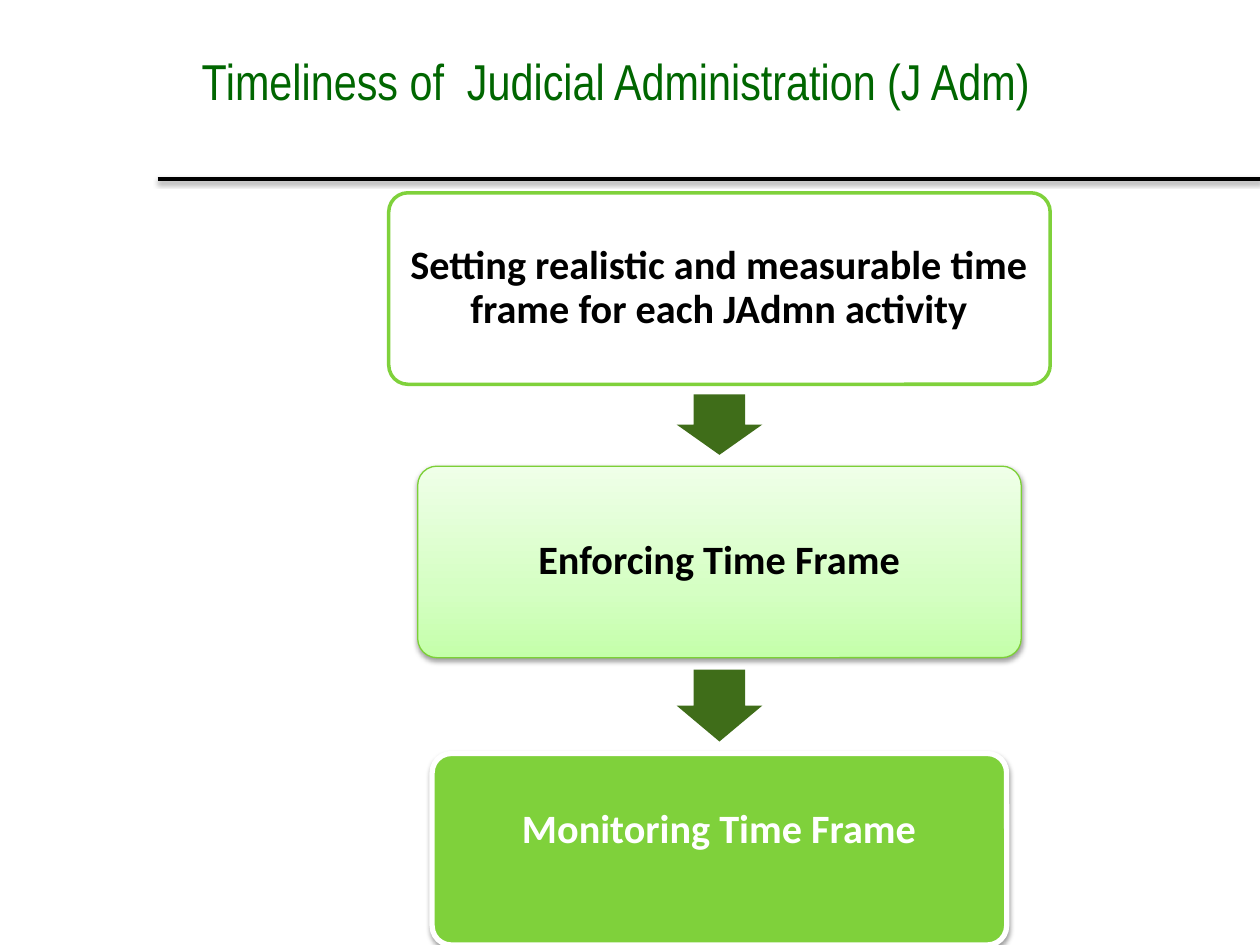
import copy
import dataclasses
import typing

import lxml.etree
import pptx
import pptx.dml.color
import pptx.enum.shapes
import pptx.enum.text
import pptx.oxml.ns
import pptx.util

RGBColor = pptx.dml.color.RGBColor
Shapes = pptx.enum.shapes.MSO_SHAPE
Inches = pptx.util.Inches

BLACK = RGBColor(0x00, 0x00, 0x00)
WHITE = RGBColor(0xFF, 0xFF, 0xFF)
TITLE_GREEN = RGBColor(0x00, 0x66, 0x00)
GREEN = RGBColor(0x7F, 0xD1, 0x3B)
EDGE_GREEN = RGBColor(0x7C, 0xD0, 0x36)
DARK_GREEN = RGBColor(0x3F, 0x6D, 0x19)
# Gradient stops from the bottom of a box to its top
PALE_GREENS = (
    (0, RGBColor(0xC4, 0xFF, 0xAA)),
    (0.35, RGBColor(0xD5, 0xFF, 0xC3)),
    (1, RGBColor(0xEF, 0xFF, 0xE8)),
)

SLIDE_WIDTH = Inches(10)
SLIDE_HEIGHT = Inches(7.5)

# Percentages of the slide's width or height
FLOW_CENTER = 57.1
STEP_HEIGHT = 20.27
ARROW_WIDTH = 6.8


@dataclasses.dataclass(frozen=True)
class Step:
    text: str
    top: float
    width: float
    fill: typing.Optional[RGBColor]  # None means the pale gradient
    line: RGBColor
    line_width: float
    text_color: RGBColor = BLACK
    shadow: bool = True
    bottom_inset: float = 0.1


@dataclasses.dataclass(frozen=True)
class Arrow:
    top: float
    height: float


STEPS = (
    Step("Setting realistic and measurable time frame for each JAdmn activity",
         20.4, 52.5, WHITE, GREEN, 2, shadow=False),
    Step("Enforcing Time Frame", 49.33, 47.9, None, EDGE_GREEN, 0.75),
    Step("Monitoring Time Frame", 79.73, 45.6, GREEN, WHITE, 3, WHITE,
         bottom_inset=0.4),
)
ARROWS = (Arrow(41.73, 6.4), Arrow(70.87, 7.6))


def across(percent: float) -> int:
    return round(SLIDE_WIDTH * percent / 100)


def down(percent: float) -> int:
    return round(SLIDE_HEIGHT * percent / 100)


def set_effects(shape, shadow: bool) -> None:
    """Give the shape an effect list, holding a soft shadow below or nothing."""
    qn = pptx.oxml.ns.qn
    properties = shape._element.spPr
    for old in properties.findall(qn("a:effectLst")):
        properties.remove(old)
    effects = lxml.etree.SubElement(properties, qn("a:effectLst"))
    if shadow:
        outer = lxml.etree.SubElement(
            effects, qn("a:outerShdw"), blurRad=str(pptx.util.Pt(3.1)),
            dist=str(pptx.util.Pt(1.6)), dir="5400000", rotWithShape="0")
        color = lxml.etree.SubElement(outer, qn("a:srgbClr"), val=str(BLACK))
        lxml.etree.SubElement(color, qn("a:alpha"), val="38000")


def fill_pale(shape) -> None:
    shape.fill.gradient()
    shape.fill.gradient_angle = 90
    stop_list = shape._element.spPr.find(".//" + pptx.oxml.ns.qn("a:gsLst"))
    stop_list.append(copy.deepcopy(stop_list[0]))
    for stop, (position, color) in zip(shape.fill.gradient_stops, PALE_GREENS):
        stop.position = position
        stop.color.rgb = color


def add_centered(page, kind, top: float, width: float, height: float):
    return page.shapes.add_shape(
        kind, across(FLOW_CENTER - width / 2), down(top),
        across(width), down(height))


def add_step(page, step: Step) -> None:
    box = add_centered(page, Shapes.ROUNDED_RECTANGLE, step.top, step.width,
                       STEP_HEIGHT)
    box.adjustments[0] = 0.1
    if step.fill is None:
        fill_pale(box)
    else:
        box.fill.solid()
        box.fill.fore_color.rgb = step.fill
    box.line.color.rgb = step.line
    box.line.width = pptx.util.Pt(step.line_width)
    set_effects(box, step.shadow)

    frame = box.text_frame
    frame.word_wrap = True
    frame.vertical_anchor = pptx.enum.text.MSO_ANCHOR.MIDDLE
    frame.margin_left = frame.margin_right = frame.margin_top = Inches(0.1)
    frame.margin_bottom = Inches(step.bottom_inset)
    para = frame.paragraphs[0]
    para.text = step.text
    para.alignment = pptx.enum.text.PP_ALIGN.CENTER
    para.line_spacing = 0.9
    para.font.name = "Calibri"
    para.font.size = pptx.util.Pt(23)
    para.font.bold = True
    para.font.color.rgb = step.text_color


def add_arrow(page, arrow: Arrow) -> None:
    shape = add_centered(page, Shapes.DOWN_ARROW, arrow.top, ARROW_WIDTH,
                         arrow.height)
    shape.adjustments[0] = 0.6
    shape.adjustments[1] = 0.5
    shape.fill.solid()
    shape.fill.fore_color.rgb = DARK_GREEN
    shape.line.fill.background()
    shape.shadow.inherit = False


def add_rule(page) -> None:
    height = down(18.93)
    rule = page.shapes.add_connector(
        pptx.enum.shapes.MSO_CONNECTOR.STRAIGHT,
        across(12.5), height, SLIDE_WIDTH, height)
    rule.line.color.rgb = BLACK
    rule.line.width = pptx.util.Pt(2)
    set_effects(rule, shadow=True)


def format_title(page) -> None:
    title = page.shapes.title
    title.left, title.top = across(15), down(4)
    title.width, title.height = across(81.7), down(14.93)
    frame = title.text_frame
    frame.word_wrap = True
    frame.auto_size = pptx.enum.text.MSO_AUTO_SIZE.NONE
    frame.vertical_anchor = pptx.enum.text.MSO_ANCHOR.MIDDLE
    frame.margin_bottom = Inches(0.5)
    para = frame.paragraphs[0]
    para.text = "Timeliness of  Judicial Administration (J Adm)"
    para.alignment = pptx.enum.text.PP_ALIGN.LEFT
    para.font.name = "Arial Narrow"
    para.font.size = pptx.util.Pt(28.8)
    para.font.color.rgb = TITLE_GREEN


def main() -> None:
    deck = pptx.Presentation()
    deck.slide_width, deck.slide_height = SLIDE_WIDTH, SLIDE_HEIGHT
    page = deck.slides.add_slide(deck.slide_layouts.get_by_name("Title Only"))
    format_title(page)
    add_rule(page)
    for step in STEPS:
        add_step(page, step)
    for arrow in ARROWS:
        add_arrow(page, arrow)
    deck.save("out.pptx")


if __name__ == "__main__":
    main()
